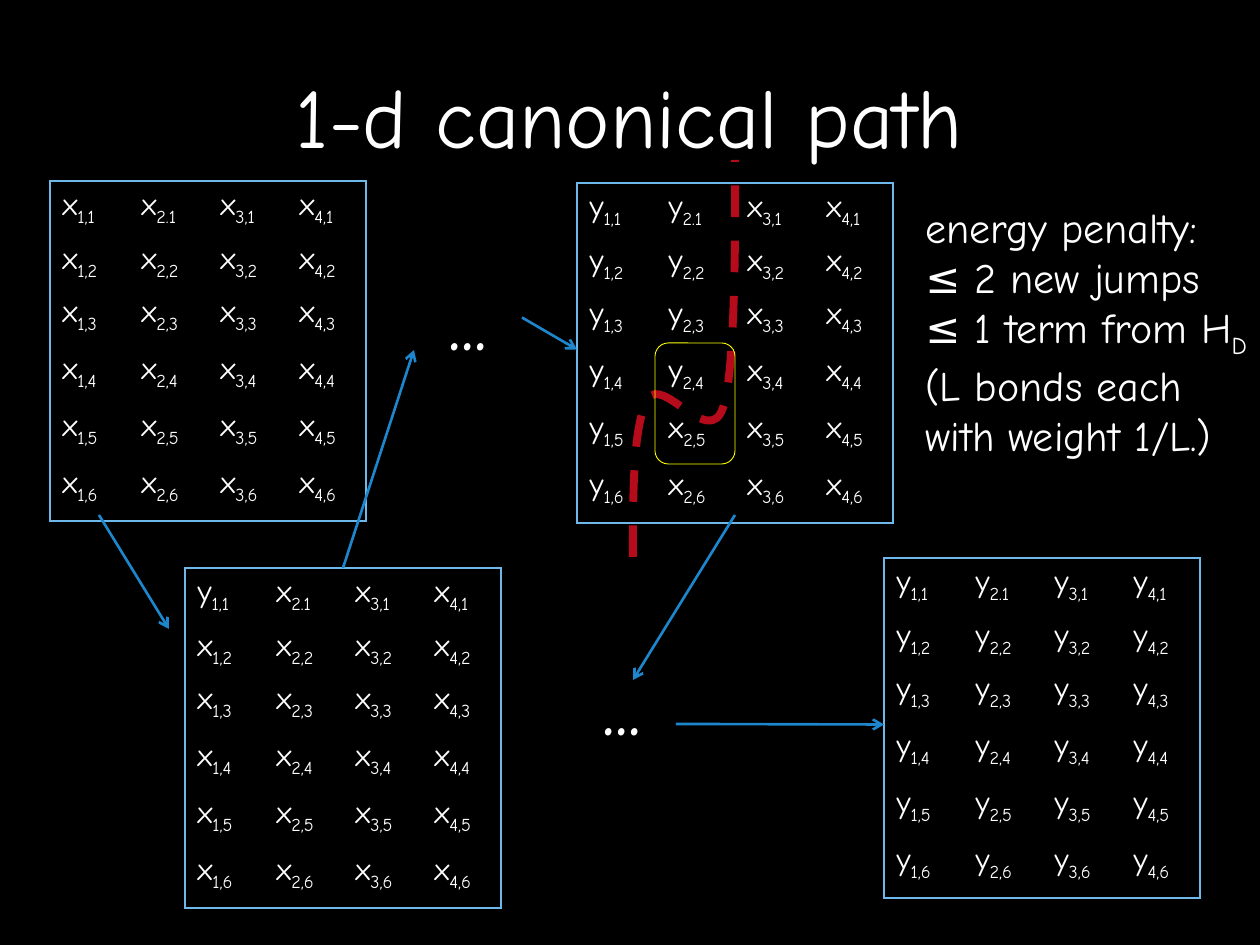
from dataclasses import dataclass

from lxml import etree
from pptx import Presentation
from pptx import util as u
from pptx.dml.color import RGBColor
from pptx.enum import dml, shapes, text
from pptx.oxml.ns import qn

EMU_PER_PX = 914400 / 126
NO_STYLE_NO_GRID = "{2D5ABB26-0587-4C30-8999-92F81FD0307C}"
TOP, LEFT, RIGHT = 0, 1, 3  # connection sites


def px(n):
    return u.Emu(round(n * EMU_PER_PX))


@dataclass(frozen=True)
class Theme:
    font: str = "Comic Neue"
    background: str = "000000"
    ink: str = "FFFFFF"
    border: str = "6EB8EA"
    arrow: str = "1D86CD"
    cut: str = "B50B1B"
    highlight: str = "FFFF00"
    title_size: int = 48
    note_size: int = 24
    cell_size: int = 18


def add_text(tf, content, *, font, size, color, align=None):
    """Fill one paragraph; text between bars is subscript."""
    p = tf.paragraphs[0]
    p.alignment = align
    for i, part in enumerate(content.split("|")):
        for j, line in enumerate(part.split("\n")):
            if j:
                p.add_line_break()
            if not line:
                continue
            r = p.add_run()
            r.text = line
            r.font.name = font
            r.font.size = u.Pt(size)
            r.font.color.rgb = RGBColor.from_string(color)
            if i % 2:
                r.font._element.set("baseline", "-25000")


class Deck:
    def __init__(self, prs, theme):
        self.theme = theme
        self.s = prs.slides.add_slide(prs.slide_layouts[5])
        fill = self.s.background.fill
        fill.solid()
        fill.fore_color.rgb = RGBColor.from_string(theme.background)

    def put(self, tf, content, size, align=None):
        add_text(tf, content, font=self.theme.font, size=size,
                 color=self.theme.ink, align=align)

    def outline(self, sp, color, width):
        sp.line.color.rgb = RGBColor.from_string(color)
        sp.line.width = u.Pt(width)

    def title(self, content, x, y, w, h):
        sp = self.s.shapes.title
        sp.left, sp.top, sp.width, sp.height = map(px, (x, y, w, h))
        sp.text_frame.vertical_anchor = text.MSO_ANCHOR.MIDDLE
        self.put(sp.text_frame, content, self.theme.title_size,
                 text.PP_ALIGN.CENTER)

    def label(self, content, x, y, w, h, size):
        sp = self.s.shapes.add_textbox(*map(px, (x, y, w, h)))
        sp.text_frame.word_wrap = False
        sp.text_frame.auto_size = text.MSO_AUTO_SIZE.SHAPE_TO_FIT_TEXT
        self.put(sp.text_frame, content, size)
        return sp

    def border(self, cell, sides):
        tcPr = cell._tc.get_or_add_tcPr()
        for side in sides:
            ln = etree.SubElement(tcPr, qn(f"a:ln{side}"), w=str(u.Pt(1)))
            fill = etree.SubElement(ln, qn("a:solidFill"))
            etree.SubElement(fill, qn("a:srgbClr"), val=self.theme.border)

    def state(self, x, y, steps):
        """Grid of variables, the first `steps` changed from x to y by column."""
        heights = (47, 47, 57, 57, 57, 62)
        rows, cols, w, h = len(heights), 4, 316, 333
        frame = self.s.shapes.add_table(rows, cols, *map(px, (x, y, w, h)))
        table = frame.table
        table.first_row = table.horz_banding = False
        table._tbl.tblPr.find(qn("a:tableStyleId")).text = NO_STYLE_NO_GRID
        for column in table.columns:
            column.width = px(w // cols)
        for r, height in enumerate(heights):
            table.rows[r].height = px(height)
            for c in range(cols):
                cell = table.cell(r, c)
                name = "y" if c * rows + r < steps else "x"
                sep = "." if (c, r) == (1, 0) else ","
                self.put(cell.text_frame, f"{name}|{c + 1}{sep}{r + 1}|",
                         self.theme.cell_size)
                edges = {"L": c == 0, "R": c == cols - 1,
                         "T": r == 0, "B": r == rows - 1}
                self.border(cell, [side for side, on in edges.items() if on])
                cell.fill.background()
        frame.height = px(h)
        return frame

    def arrow(self, start, end, begin=None, finish=None):
        """Arrow between points; begin and finish are (shape, site) joints."""
        sp = self.s.shapes.add_connector(
            shapes.MSO_CONNECTOR.STRAIGHT, *map(px, (*start, *end)))
        if begin:
            sp.begin_connect(*begin)
        if finish:
            sp.end_connect(*finish)
        self.outline(sp, self.theme.arrow, 1.5)
        etree.SubElement(sp.line._get_or_add_ln(), qn("a:tailEnd"), type="arrow")
        etree.SubElement(sp._element.spPr, qn("a:effectLst"))

    def curve(self, points):
        """Dashed Bezier curve: a start, then three points for each segment."""
        builder = self.s.shapes.build_freeform(*points[0], scale=EMU_PER_PX)
        builder.add_line_segments(points[1:], close=False)
        sp = builder.convert_to_shape()
        outline = next(sp._element.iter(qn("a:path")))
        lines = outline.findall(qn("a:lnTo"))
        for i in range(0, len(lines), 3):
            bezier = etree.SubElement(outline, qn("a:cubicBezTo"))
            for line in lines[i:i + 3]:
                bezier.append(line[0])
                outline.remove(line)
        # The curve spans its end points, not its control points
        span = points[-1][0] - points[0][0]
        outline.set("w", str(span))
        sp.width = px(span)
        sp.shadow.inherit = False
        sp.fill.background()
        self.outline(sp, self.theme.cut, 4.5)
        sp.line.dash_style = dml.MSO_LINE.DASH

    def frame(self, x, y, w, h):
        sp = self.s.shapes.add_shape(
            shapes.MSO_SHAPE.ROUNDED_RECTANGLE, *map(px, (x, y, w, h)))
        sp.shadow.inherit = False
        sp.fill.background()
        self.outline(sp, self.theme.highlight, 0.5)


def main():
    prs = Presentation()
    prs.slide_width, prs.slide_height = px(1260), px(945)
    theme = Theme()
    deck = Deck(prs, theme)
    deck.title("1-d canonical path", 94, 16, 1071, 197)

    # States along the path
    deck.state(50, 181, steps=0)
    last = deck.state(884, 558, steps=24)
    first = deck.state(185, 568, steps=1)
    middle = deck.state(577, 183, steps=10)

    # Steps into the middle state
    deck.arrow((99, 515), (169, 629))
    deck.arrow((343, 568), (414, 350), begin=(first, TOP))
    dots = deck.label("...", 436, 260, 86, 115, theme.title_size)
    deck.arrow((522, 317), (577, 349), begin=(dots, RIGHT), finish=(middle, LEFT))

    # Boundary between changed and unchanged variables
    deck.curve([(633, 557), (633, 491), (633, 425), (648, 399),
                (663, 375), (709, 449), (723, 408),
                (738, 368), (735, 160), (735, 160)])
    deck.label("energy penalty:\n≤ 2 new jumps\n≤ 1 term from H|D|\n"
               "(L bonds each\nwith weight 1/L.)",
               913, 195, 352, 267, theme.note_size)

    # Steps to the last state
    deck.arrow((735, 515), (633, 680))
    deck.label("...", 590, 645, 86, 115, theme.title_size)
    deck.arrow((676, 724), (884, 724), finish=(last, LEFT))

    # Variables at the jump
    deck.frame(655, 343, 80, 121)
    prs.save("out.pptx")


if __name__ == "__main__":
    main()
